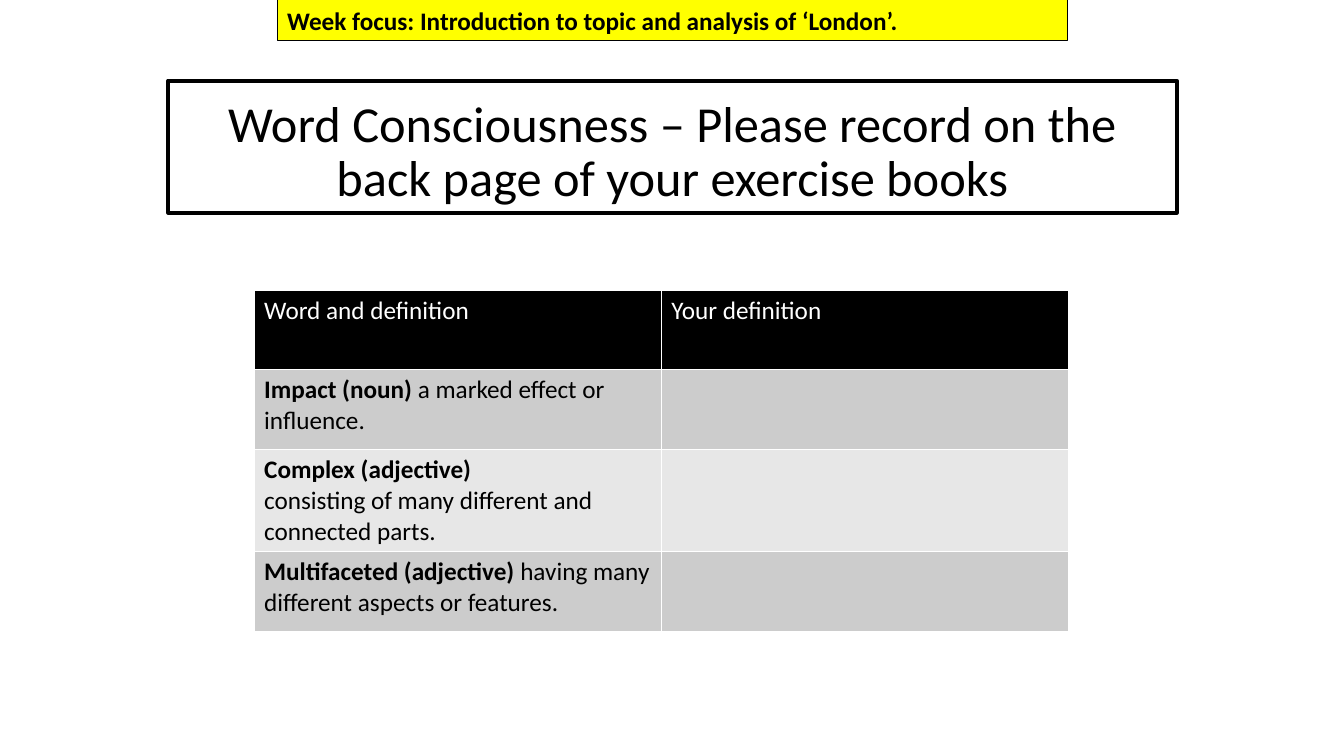
"""Build a vocabulary slide with a focus banner, a title and a definitions table."""
from pptx import Presentation
from pptx import util as u
from pptx.dml.color import RGBColor
from pptx.enum import shapes, text

FONT = "Calibri"
COLOURS = {"ink": "000000", "paper": "FFFFFF", "banner": "FFFF00",
           "dark_band": "CCCCCC", "light_band": "E7E7E7"}
FOCUS = "Week focus: Introduction to topic and analysis of ‘London’."
TITLE = "Word Consciousness – Please record on the back page of your exercise books"
HEADINGS = ["Word and definition", "Your definition"]
WORDS = [
    ("Impact (noun) ", False, "a marked effect or influence."),
    ("Complex (adjective) ", True, "consisting of many different and connected parts."),
    ("Multifaceted (adjective) ", False, "having many different aspects or features."),
]
ROW_HEIGHT = 0.79


def colour(name):
    return RGBColor.from_string(COLOURS[name])


def style_font(font, size, ink="ink", bold=False):
    font.name, font.size, font.bold = FONT, u.Pt(size), bold
    font.color.rgb = colour(ink)


def place(shape, left, top, width, height):
    shape.left, shape.top = u.Inches(left), u.Inches(top)
    shape.width, shape.height = u.Inches(width), u.Inches(height)


def paint(shape, fill, line_width):
    shape.fill.solid()
    shape.fill.fore_color.rgb = colour(fill)
    shape.line.color.rgb = colour("ink")
    shape.line.width = u.Pt(line_width)


def add_title(page):
    title = page.shapes.title
    place(title, 1.67, 0.8, 10, 1.31)
    paint(title, "paper", 3)
    frame = title.text_frame
    frame.text = TITLE
    frame.word_wrap = True
    frame.auto_size = text.MSO_AUTO_SIZE.NONE
    frame.vertical_anchor = text.MSO_ANCHOR.BOTTOM
    para = frame.paragraphs[0]
    para.alignment = text.PP_ALIGN.CENTER
    para.line_spacing = 0.9
    style_font(para.font, 36)


def add_definitions(page):
    row_count = len(WORDS) + 1
    table = page.shapes.add_table(
        row_count, len(HEADINGS), u.Inches(2.52), u.Inches(2.88),
        u.Inches(8.08), u.Inches(ROW_HEIGHT * row_count)).table
    for row_index, row in enumerate(table.rows):
        band = "ink" if row_index == 0 else ("dark_band" if row_index % 2 else "light_band")
        for cell in row.cells:
            cell.fill.solid()
            cell.fill.fore_color.rgb = colour(band)
    for column, heading in enumerate(HEADINGS):
        cell = table.cell(0, column)
        cell.text = heading
        style_font(cell.text_frame.paragraphs[0].font, 18, "paper")
    for row_index, (word, breaks, meaning) in enumerate(WORDS, start=1):
        para = table.cell(row_index, 0).text_frame.paragraphs[0]
        style_font(para.font, 18)
        span = para.add_run()
        span.text = word
        span.font.bold = True
        if breaks:
            para.add_line_break()
        para.add_run().text = meaning


def add_banner(page):
    banner = page.shapes.add_shape(shapes.MSO_SHAPE.RECTANGLE, 0, 0, 0, 0)
    place(banner, 2.75, 0, 7.84, 0.4)
    banner.shadow.inherit = False
    paint(banner, "banner", 0.75)
    frame = banner.text_frame
    frame.text = FOCUS
    frame.word_wrap = True
    frame.vertical_anchor = text.MSO_ANCHOR.TOP
    para = frame.paragraphs[0]
    para.alignment = text.PP_ALIGN.LEFT
    style_font(para.font, 18, bold=True)


def main():
    deck = Presentation()
    deck.slide_width, deck.slide_height = u.Inches(13.33), u.Inches(7.5)
    page = deck.slides.add_slide(deck.slide_layouts[5])
    add_title(page)
    add_definitions(page)
    add_banner(page)
    deck.save("out.pptx")


if __name__ == "__main__":
    main()
